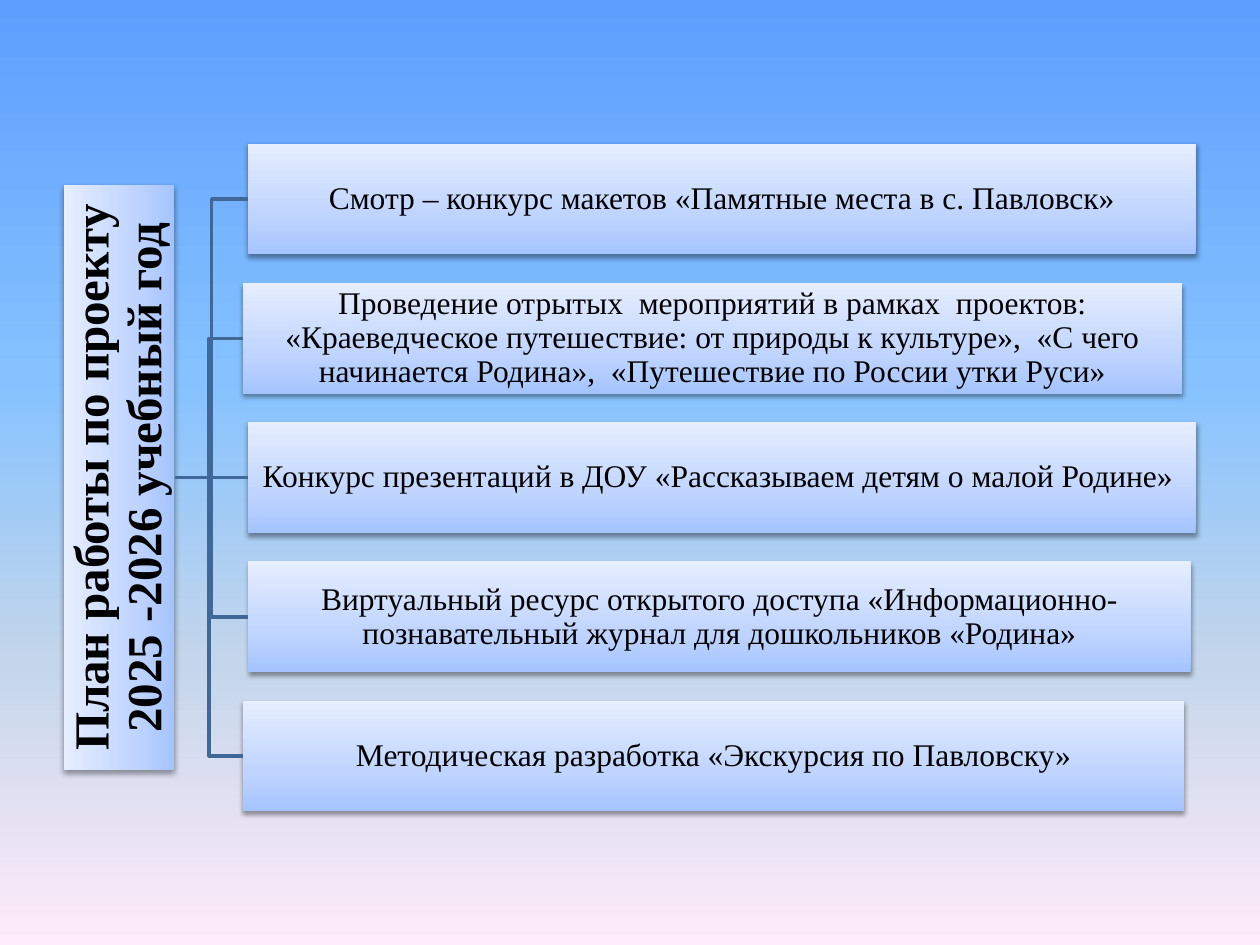
import pptx
import pptx.dml.color
import pptx.enum.shapes
import pptx.enum.text
import pptx.oxml
import pptx.oxml.ns
import pptx.util
from pptx.util import Inches

COLORS = {"line": "3F6797", "text": "000000"}
SKY = {0: "5E9EFF", 40: "85C2FF", 70: "C4D6EB", 100: "FFEBFA"}
PANEL = {0: "A4C4FF", 35: "BFD4FF", 100: "E6EEFF"}
FONT = "Times New Roman"
NAMESPACE = pptx.oxml.ns.nsdecls("a")
SHADOW = (
    f'<a:effectLst {NAMESPACE}><a:outerShdw blurRad="39370" dist="20320" dir="5400000" '
    f'rotWithShape="0"><a:srgbClr val="{COLORS["text"]}"><a:alpha val="38000"/>'
    "</a:srgbClr></a:outerShdw></a:effectLst>"
)


def paint_gradient(fill, element, stops, angle):
    fill.gradient()
    fill.gradient_angle = angle
    stop_list = next(element.iter(pptx.oxml.ns.qn("a:gsLst")))
    for stop in list(stop_list):
        stop_list.remove(stop)
    for position, color in stops.items():
        stop_list.append(pptx.oxml.parse_xml(
            f'<a:gs {NAMESPACE} pos="{position * 1000}"><a:srgbClr val="{color}"/></a:gs>'))


def add_panel(page, left, top, width, height, text, size, inset, bold=False):
    box = page.shapes.add_shape(
        pptx.enum.shapes.MSO_SHAPE.RECTANGLE,
        Inches(left), Inches(top), Inches(width), Inches(height))
    paint_gradient(box.fill, box._element.spPr, PANEL, 90)
    box.line.fill.background()
    box._element.spPr.append(pptx.oxml.parse_xml(SHADOW))
    frame = box.text_frame
    frame.word_wrap = True
    frame.vertical_anchor = pptx.enum.text.MSO_ANCHOR.MIDDLE
    frame.margin_left = frame.margin_right = Inches(inset)
    frame.margin_top = frame.margin_bottom = Inches(inset)
    para = frame.paragraphs[0]
    para.alignment = pptx.enum.text.PP_ALIGN.CENTER
    para.line_spacing = 0.9
    span = para.add_run()
    span.text = text
    span.font.name = FONT
    span.font.size = pptx.util.Pt(size)
    span.font.bold = bold
    span.font.color.rgb = pptx.dml.color.RGBColor.from_string(COLORS["text"])
    return box


deck = pptx.Presentation()
deck.slide_width, deck.slide_height = Inches(10), Inches(7.5)
page = deck.slides.add_slide(deck.slide_layouts[6])
paint_gradient(page.background.fill, page._element, SKY, 270)

# Vertical title panel
title = add_panel(page, -1.38, 3.35, 4.65, 0.88,
                  "План работы по проекту 2025 -2026 учебный год", 28, 0.02, bold=True)
title.rotation = 270

# Plan items: left, width, text
items = [
    (1.97, 7.52, "Смотр – конкурс макетов «Памятные места в с. Павловск»"),
    (1.93, 7.45, "Проведение отрытых  мероприятий в рамках  проектов: «Краеведческое "
                 "путешествие: от природы к культуре»,  «С чего начинается Родина»,  "
                 "«Путешествие по России утки Руси»"),
    (1.97, 7.52, "Конкурс презентаций в ДОУ «Рассказываем детям о малой Родине» "),
    (1.97, 7.48, "Виртуальный ресурс открытого доступа «Информационно-познавательный "
                 "журнал для дошкольников «Родина»"),
    (1.93, 7.47, "Методическая разработка «Экскурсия по Павловску»"),
]
first_top, pitch, height = 1.14, 1.105, 0.88
boxes = [
    add_panel(page, left, first_top + row * pitch, width, height, text, 18, 0.01)
    for row, (left, width, text) in enumerate(items)
]

# Branches from the title to each item
start_x, start_y = Inches(1.39), Inches(3.79)
middle = len(boxes) // 2
for row, box in enumerate(boxes):
    if row == middle:
        branch = page.shapes.add_connector(
            pptx.enum.shapes.MSO_CONNECTOR.STRAIGHT, start_x, start_y, box.left, start_y)
        branch.begin_connect(title, 2)
        branch.end_connect(box, 1)
        # The title is rotated, so its bottom side faces right
        branch.begin_x, branch.begin_y = start_x, start_y
        branch._element.spPr.append(pptx.oxml.parse_xml(f"<a:effectLst {NAMESPACE}/>"))
    else:
        bend_x = (start_x + box.left) // 2
        end_y = box.top + box.height // 2
        builder = page.shapes.build_freeform(start_x, start_y)
        builder.add_line_segments(
            [(bend_x, start_y), (bend_x, end_y), (box.left, end_y)], close=False)
        branch = builder.convert_to_shape()
        branch.fill.background()
        branch.shadow.inherit = False
    branch.line.color.rgb = pptx.dml.color.RGBColor.from_string(COLORS["line"])
    branch.line.width = pptx.util.Pt(2)

deck.save("out.pptx")
